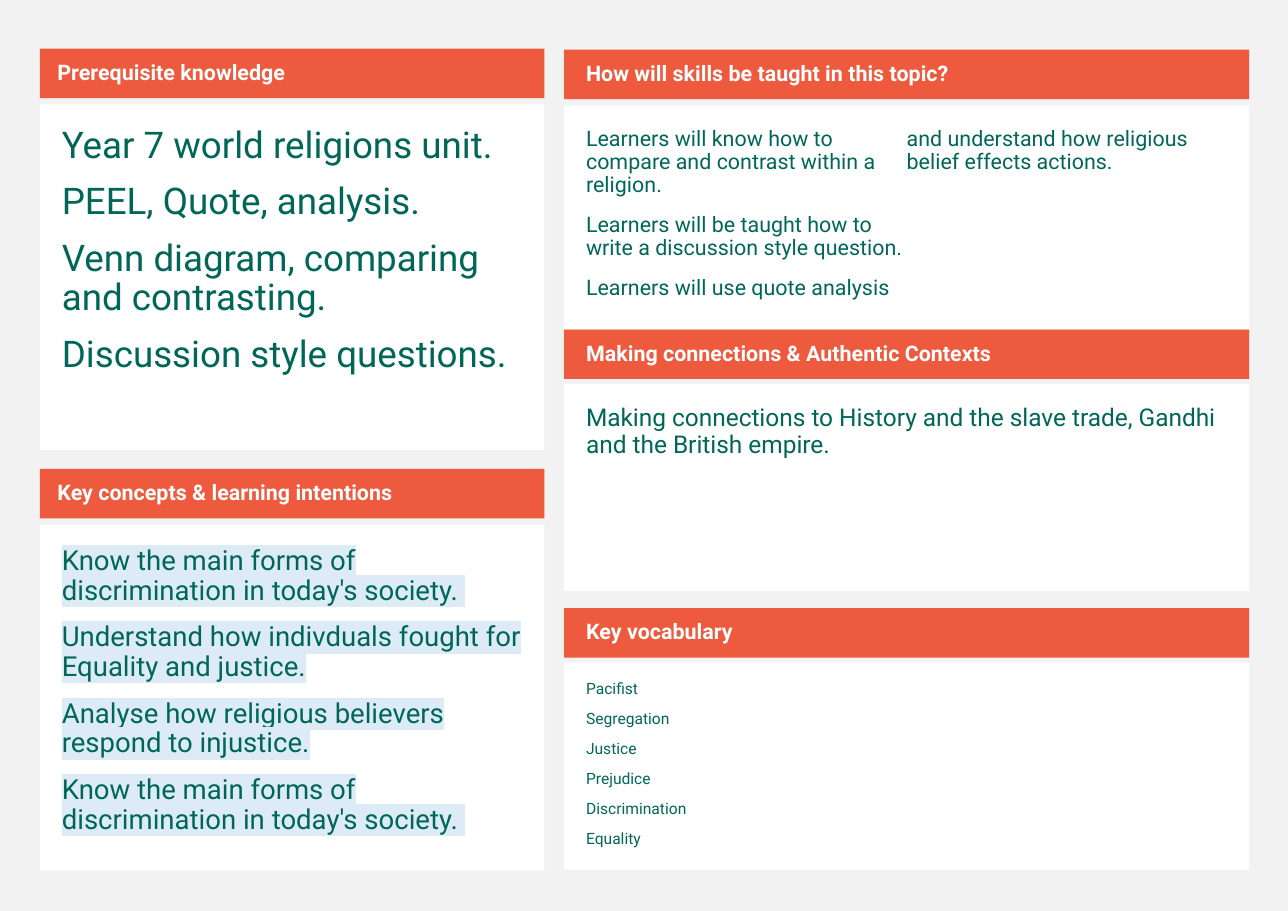
from pptx import Presentation
from pptx.dml.color import RGBColor
from pptx.enum.shapes import MSO_SHAPE as Shape
from pptx.enum.text import MSO_ANCHOR as Anchor, PP_ALIGN as Align
from pptx.oxml.ns import qn
from pptx.util import Pt
from lxml.etree import SubElement

LEFT_X, LEFT_W = 26, 329.8
RIGHT_X, RIGHT_W = 368.6, 447.8
HEADER_H = 32.4


def color(value):
    return RGBColor.from_string(value)


class Board:
    font = "Roboto"
    page = "F2F2F2"
    accent = "ED5A3E"
    panel = "FFFFFF"
    ink = "006758"
    mark = "DDEBF7"

    def __init__(self, prs):
        self.s = prs.slides.add_slide(prs.slide_layouts[6])
        fill = self.s.background.fill
        fill.solid()
        fill.fore_color.rgb = color(self.page)

    def box(self, x, y, w, h, fill, insets, anchor):
        sp = self.s.shapes.add_shape(Shape.RECTANGLE, Pt(x), Pt(y), Pt(w), Pt(h))
        sp.shadow.inherit = False
        sp.fill.solid()
        sp.fill.fore_color.rgb = color(fill)
        sp.line.fill.background()
        tf = sp.text_frame
        tf.word_wrap = True
        tf.vertical_anchor = anchor
        tf.margin_left, tf.margin_top, tf.margin_right, tf.margin_bottom = map(Pt, insets)
        return tf

    def set_text(self, tf, lines, size, ink, bold=False, spacing=0.9):
        tf.text = "\n".join(lines)
        for p in tf.paragraphs:
            p.alignment = Align.LEFT
            p.line_spacing = spacing
            p.space_before = Pt(11)
            p.font.name = self.font
            p.font.size = Pt(size)
            p.font.bold = bold
            p.font.color.rgb = color(ink)

    def header(self, x, y, w, title, inset):
        tf = self.box(x, y, w, HEADER_H, self.accent, (inset, 3.6, 7.2, 3.6), Anchor.MIDDLE)
        self.set_text(tf, [title], 14, self.panel, bold=True)

    def body(self, x, y, w, h, lines, size, spacing=0.9):
        tf = self.box(x, y, w, h, self.panel, (14.4,) * 4, Anchor.TOP)
        self.set_text(tf, lines, size, self.ink, spacing=spacing)
        return tf

    def columns(self, tf, count):
        tf._txBody.bodyPr.set("numCol", str(count))

    def highlight(self, tf):
        for p in tf.paragraphs:
            for r in p.runs:
                mark = SubElement(r._r.get_or_add_rPr(), qn("a:highlight"))
                SubElement(mark, qn("a:srgbClr")).set("val", self.mark)


def main():
    prs = Presentation()
    prs.slide_width, prs.slide_height = Pt(841.7), Pt(595.4)
    board = Board(prs)

    for y, title in [
        (31.8, "Prerequisite knowledge"),
        (306.4, "Key concepts & learning intentions"),
    ]:
        board.header(LEFT_X, y, LEFT_W, title, 11.5)
    for y, title in [
        (32.4, "How will skills be taught in this topic?"),
        (215.3, "Making connections & Authentic Contexts"),
        (397.4, "Key vocabulary"),
    ]:
        board.header(RIGHT_X, y, RIGHT_W, title, 14.4)

    board.body(LEFT_X, 68.2, LEFT_W, 226, [
        "Year 7 world religions unit.",
        "PEEL, Quote, analysis.",
        "Venn diagram, comparing and contrasting.",
        "Discussion style questions.",
    ], 24)

    society = "Know the main forms of discrimination in today's society. "
    concepts = board.body(LEFT_X, 342.9, LEFT_W, 226, [
        society,
        "Understand how indivduals fought for Equality and justice.",
        "Analyse how religious believers respond to injustice.",
        society,
    ], 18)
    board.highlight(concepts)

    skills = board.body(RIGHT_X, 69, RIGHT_W, 146.3, [
        "Learners will know how to compare and contrast within a religion.",
        "Learners will be taught how to write a discussion style question.",
        "Learners will use quote analysis and understand how religious belief effects actions.",
    ], 14)
    board.columns(skills, 2)

    board.body(RIGHT_X, 250.8, RIGHT_W, 135.4, [
        "Making connections to History and the slave trade, Gandhi and the British empire.",
    ], 16)

    board.body(RIGHT_X, 432.9, RIGHT_W, 135.4, [
        "Pacifist", "Segregation", "Justice", "Prejudice", "Discrimination", "Equality",
    ], 10.2, spacing=0.7)

    prs.save("out.pptx")


if __name__ == "__main__":
    main()
